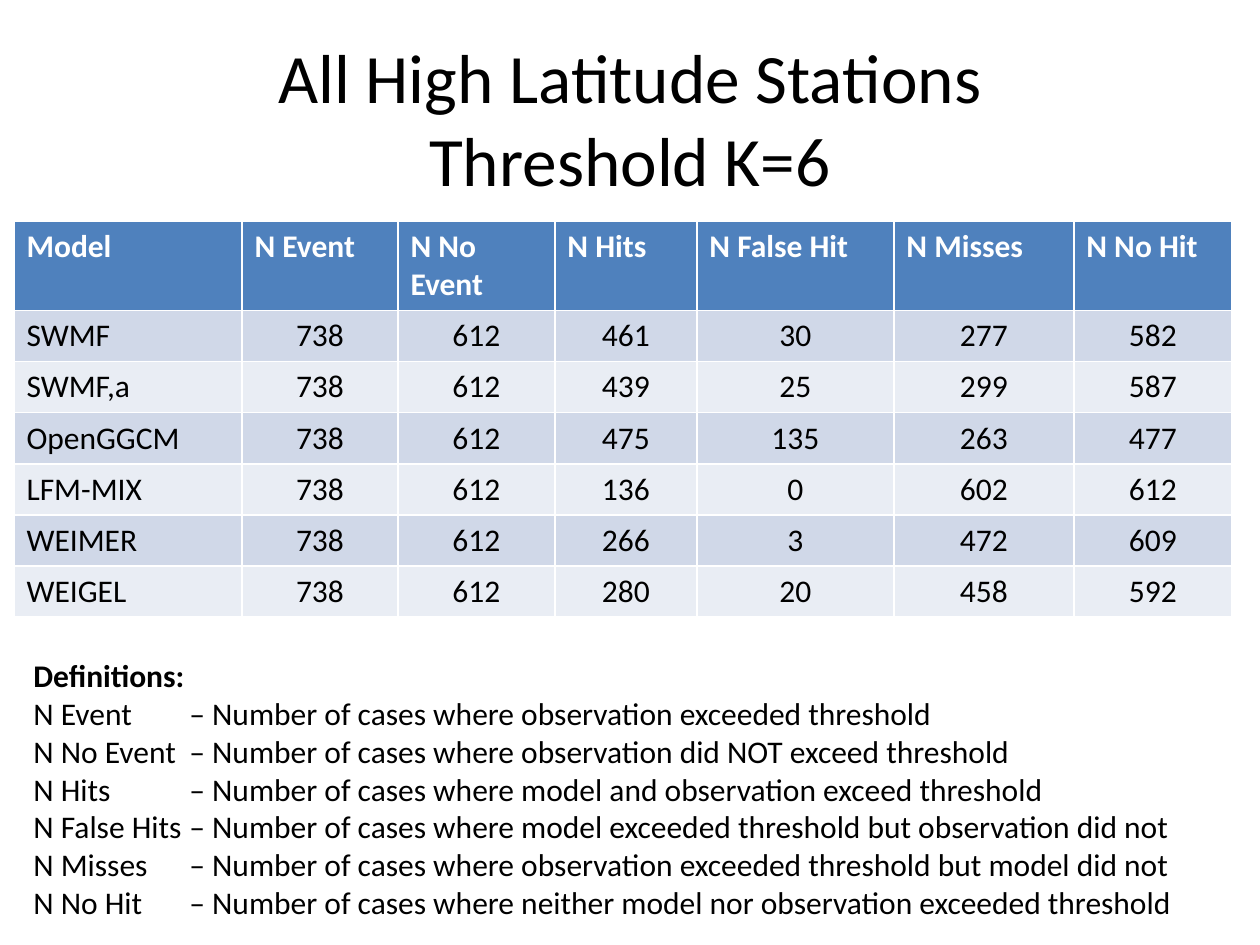
from lxml import etree
from pptx import Presentation
from pptx.dml.color import RGBColor
from pptx.enum.text import MSO_ANCHOR, MSO_AUTO_SIZE, PP_ALIGN
from pptx.oxml.ns import qn
from pptx.util import Pt

LEFT, CENTER = PP_ALIGN.LEFT, PP_ALIGN.CENTER
MIDDLE = MSO_ANCHOR.MIDDLE
NO_AUTOFIT = MSO_AUTO_SIZE.NONE

BLACK = RGBColor(0x00, 0x00, 0x00)
WHITE = RGBColor(0xFF, 0xFF, 0xFF)
HEADER_BLUE = RGBColor(0x4F, 0x81, 0xBD)
BAND_DARK = RGBColor(0xD0, 0xD8, 0xE8)
BAND_LIGHT = RGBColor(0xE9, 0xED, 0xF4)

PX = 914400 / 126


def px(length):
    return round(length * PX)


def format_runs(paragraph, size=18, bold=False, color=BLACK):
    for run in paragraph.runs:
        values = {"name": "Calibri", "size": Pt(size), "bold": bold}
        for name, value in values.items():
            setattr(run.font, name, value)
        run.font.color.rgb = color


presentation = Presentation()
presentation.slide_width, presentation.slide_height = px(1260), px(945)
slide = presentation.slides.add_slide(presentation.slide_layouts[5])

# Title
title = slide.shapes.title
title_box = {"left": 63, "top": 38, "width": 1134, "height": 158}
for name, value in title_box.items():
    setattr(title, name, px(value))
title_frame = title.text_frame
title_frame.text = "All High Latitude Stations\vThreshold K=6"
title_frame.auto_size = NO_AUTOFIT
title_frame.vertical_anchor = MIDDLE
title_frame.paragraphs[0].alignment = CENTER
format_runs(title_frame.paragraphs[0], size=39.6)

# Table of event counts per model
rows = [
    ("Model", "N Event", "N No Event", "N Hits", "N False Hit", "N Misses", "N No Hit"),
    ("SWMF", 738, 612, 461, 30, 277, 582),
    ("SWMF,a", 738, 612, 439, 25, 299, 587),
    ("OpenGGCM", 738, 612, 475, 135, 263, 477),
    ("LFM-MIX", 738, 612, 136, 0, 602, 612),
    ("WEIMER", 738, 612, 266, 3, 472, 609),
    ("WEIGEL", 738, 612, 280, 20, 458, 592),
]
column_widths = [228, 156, 157, 142, 197, 180, 158]
row_heights = [89] + [51] * (len(rows) - 1)
table = slide.shapes.add_table(
    len(rows), len(column_widths), px(14), px(221),
    px(sum(column_widths)), px(sum(row_heights))).table
for column, width in zip(table.columns, column_widths):
    column.width = px(width)
for row, height in zip(table.rows, row_heights):
    row.height = px(height)

for row_index, values in enumerate(rows):
    is_header = row_index == 0
    band = BAND_DARK if row_index % 2 else BAND_LIGHT
    for column_index, value in enumerate(values):
        cell = table.cell(row_index, column_index)
        cell.text = str(value)
        cell.fill.solid()
        cell.fill.fore_color.rgb = HEADER_BLUE if is_header else band
        paragraph = cell.text_frame.paragraphs[0]
        paragraph.alignment = LEFT if is_header or column_index == 0 else CENTER
        format_runs(paragraph, bold=is_header, color=WHITE if is_header else BLACK)

# Definitions, with the dashes aligned on a tab stop
definitions = [
    ("N Event", "observation exceeded threshold"),
    ("N No Event", "observation did NOT exceed threshold"),
    ("N Hits", "model and observation exceed threshold"),
    ("N False Hits", "model exceeded threshold but observation did not"),
    ("N Misses", "observation exceeded threshold but model did not"),
    ("N No Hit", "neither model nor observation exceeded threshold"),
]
definitions_frame = slide.shapes.add_textbox(
    px(21), px(650), px(1176), px(280)).text_frame
definitions_frame.word_wrap = True
heading = definitions_frame.paragraphs[0]
heading.text = "Definitions:"
format_runs(heading, bold=True)
for term, meaning in definitions:
    paragraph = definitions_frame.add_paragraph()
    paragraph.text = f"{term}\t– Number of cases where {meaning}"
    tab_list = etree.SubElement(paragraph._p.get_or_add_pPr(), qn("a:tabLst"))
    etree.SubElement(tab_list, qn("a:tab"), pos=str(px(156)), algn="l")
    format_runs(paragraph)

presentation.save("out.pptx")
